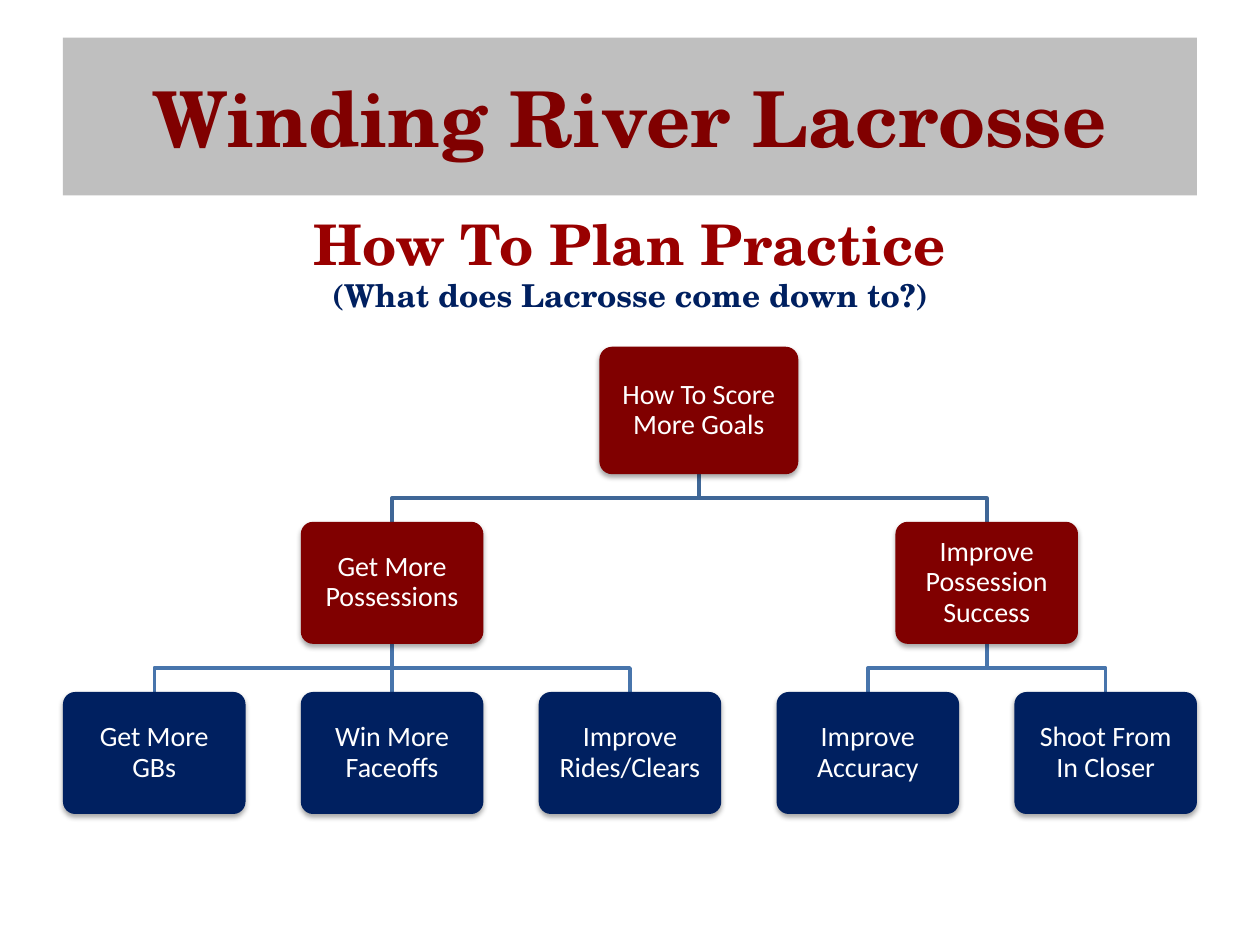
from dataclasses import dataclass

from lxml.etree import SubElement
from pptx import Presentation
from pptx.dml.color import RGBColor
from pptx.enum.shapes import MSO_CONNECTOR, MSO_SHAPE
from pptx.enum.text import MSO_ANCHOR, PP_ALIGN
from pptx.oxml.ns import qn
from pptx.util import Cm, Pt


@dataclass(frozen=True)
class Theme:
    """Colours, fonts and type sizes of the slide."""
    maroon: str = "800000"
    red: str = "990000"
    navy: str = "002060"
    grey: str = "BFBFBF"
    white: str = "FFFFFF"
    upper_link: str = "3F6797"
    lower_link: str = "4875AC"
    heading_font: str = "TeX Gyre Schola"
    node_font: str = "Calibri"
    title_size: int = 44
    subtitle_size: int = 32
    question_size: int = 18
    node_size: int = 16


@dataclass(frozen=True)
class Box:
    """A rectangle in centimetres."""
    left: float
    top: float
    width: float
    height: float

    @property
    def center(self):
        """Return the horizontal centre."""
        return self.left + self.width / 2

    @property
    def bottom(self):
        """Return the lower edge."""
        return self.top + self.height

    def lengths(self):
        """Return the four measures as slide lengths."""
        return [Cm(value) for value in (self.left, self.top, self.width, self.height)]


THEME = Theme()
ROOT = "How To Score More Goals"
BRANCHES = {
    "Get More Possessions": ["Get More GBs", "Win More Faceoffs", "Improve Rides/Clears"],
    "Improve Possession Success": ["Improve Accuracy", "Shoot From In Closer"],
}


def write(paragraph, text, font, size, color, bold=False):
    """Fill a centred paragraph with text in one style."""
    paragraph.text = text
    paragraph.alignment = PP_ALIGN.CENTER
    paragraph.font.name = font
    paragraph.font.size = Pt(size)
    paragraph.font.bold = bold
    paragraph.font.color.rgb = RGBColor.from_string(color)


def add_block(slide, box, preset, color):
    """Add a plain filled shape with middle-anchored text."""
    shape = slide.shapes.add_shape(preset, *box.lengths())
    shape.shadow.inherit = False
    shape.fill.solid()
    shape.fill.fore_color.rgb = RGBColor.from_string(color)
    shape.line.fill.background()
    shape.text_frame.word_wrap = True
    shape.text_frame.vertical_anchor = MSO_ANCHOR.MIDDLE
    return shape


def add_soft_shadow(shape):
    """Give a shape a faint shadow straight below it."""
    effects = shape._element.spPr.find(qn("a:effectLst"))
    shadow = SubElement(effects, qn("a:outerShdw"), blurRad=str(Pt(3.1)),
                        dist=str(Pt(1.8)), dir="5400000", rotWithShape="0")
    color = SubElement(shadow, qn("a:srgbClr"), val="000000")
    SubElement(color, qn("a:alpha"), val="35000")


def add_node(slide, box, text, color):
    """Add one rounded box of the tree."""
    shape = add_block(slide, box, MSO_SHAPE.ROUNDED_RECTANGLE, color)
    shape.adjustments[0] = 0.1
    add_soft_shadow(shape)
    frame = shape.text_frame
    frame.margin_left = frame.margin_right = Cm(0.18)
    frame.margin_top = frame.margin_bottom = Cm(0.18)
    paragraph = frame.paragraphs[0]
    write(paragraph, text, THEME.node_font, THEME.node_size, THEME.white)
    paragraph.line_spacing = 0.9


def add_link(slide, parent, child, color):
    """Join a parent box to a child box with a straight or stepped line."""
    start_x, end_x = Cm(parent.center), Cm(child.center)
    start_y, end_y = Cm(parent.bottom), Cm(child.top)
    if abs(parent.center - child.center) < 0.01:
        link = slide.shapes.add_connector(
            MSO_CONNECTOR.STRAIGHT, start_x, start_y, end_x, end_y)
        SubElement(link._element.spPr, qn("a:effectLst"))
    else:
        middle_y = (start_y + end_y) // 2
        builder = slide.shapes.build_freeform(start_x, start_y)
        builder.add_line_segments(
            [(start_x, middle_y), (end_x, middle_y), (end_x, end_y)], close=False)
        link = builder.convert_to_shape()
        link.fill.background()
        link.shadow.inherit = False
    link.line.color.rgb = RGBColor.from_string(color)
    link.line.width = Pt(2)


def add_banner(slide, box):
    """Add the title band."""
    banner = add_block(slide, box, MSO_SHAPE.RECTANGLE, THEME.grey)
    write(banner.text_frame.paragraphs[0], "Winding River Lacrosse",
          THEME.heading_font, THEME.title_size, THEME.maroon, bold=True)


def add_subtitle(slide, box):
    """Add the topic and the question below it."""
    frame = slide.shapes.add_textbox(*box.lengths()).text_frame
    frame.word_wrap = True
    write(frame.paragraphs[0], "How To Plan Practice",
          THEME.heading_font, THEME.subtitle_size, THEME.red, bold=True)
    write(frame.add_paragraph(), "(What does Lacrosse come down to?)",
          THEME.heading_font, THEME.question_size, THEME.navy, bold=True)


def add_tree(slide, box):
    """Add the goal tree, with each branch centred over its leaves."""
    node_width, node_height = 3.68, 2.46
    root_width, root_height, root_shift = 4.01, 2.57, 0.19
    branch_top, leaf_top = box.top + 3.53, box.bottom - node_height
    leaf_count = sum(len(leaves) for leaves in BRANCHES.values())
    pitch = (box.width - node_width) / (leaf_count - 1)

    nodes, links, branch_boxes = [], [], []
    position = 0
    for branch, leaves in BRANCHES.items():
        leaf_boxes = [Box(box.left + (position + index) * pitch, leaf_top,
                          node_width, node_height) for index in range(len(leaves))]
        position += len(leaves)
        branch_left = (leaf_boxes[0].left + leaf_boxes[-1].left) / 2
        branch_box = Box(branch_left, branch_top, node_width, node_height)
        branch_boxes.append(branch_box)
        nodes.append((branch_box, branch, THEME.maroon))
        for leaf_box, leaf in zip(leaf_boxes, leaves):
            nodes.append((leaf_box, leaf, THEME.navy))
            links.append((branch_box, leaf_box, THEME.lower_link))

    root_center = (branch_boxes[0].center + branch_boxes[-1].center) / 2 + root_shift
    root_box = Box(root_center - root_width / 2, box.top, root_width, root_height)
    nodes.insert(0, (root_box, ROOT, THEME.maroon))
    links += [(root_box, branch_box, THEME.upper_link) for branch_box in branch_boxes]

    for link in links:
        add_link(slide, *link)
    for node in nodes:
        add_node(slide, *node)


def main():
    """Build and save the slide."""
    presentation = Presentation()
    presentation.slide_width, presentation.slide_height = Cm(25.4), Cm(19.05)
    slide = presentation.slides.add_slide(presentation.slide_layouts[6])
    add_tree(slide, Box(1.27, 6.99, 22.86, 9.42))
    add_banner(slide, Box(1.27, 0.76, 22.86, 3.18))
    add_subtitle(slide, Box(1.75, 4.09, 21.9, 2.39))
    presentation.save("out.pptx")


if __name__ == "__main__":
    main()
